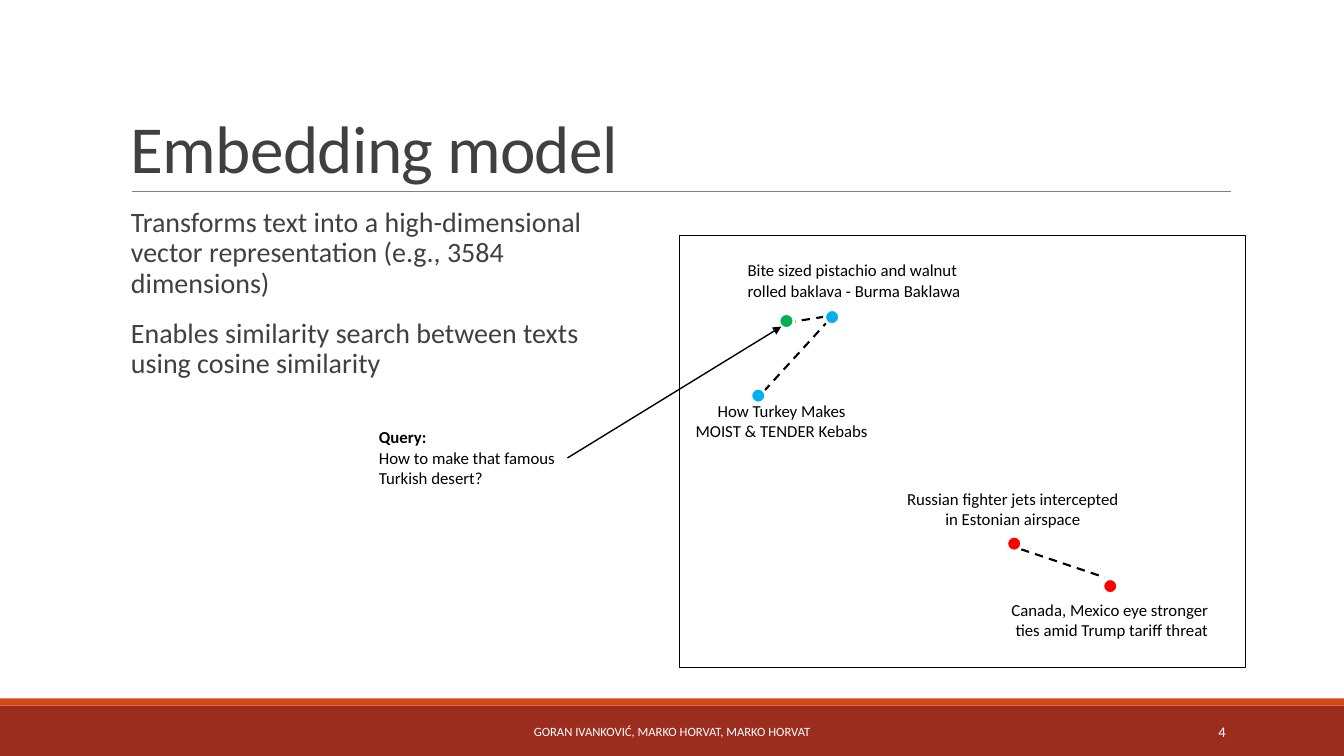
from pptx import Presentation
from pptx.dml.color import RGBColor
from pptx.enum.dml import MSO_LINE
from pptx.enum.shapes import MSO_CONNECTOR, MSO_SHAPE
from pptx.enum.text import MSO_ANCHOR, MSO_AUTO_SIZE, PP_ALIGN
from pptx.oxml.ns import qn
from pptx.util import Cm, Pt
from lxml import etree

BLACK = RGBColor(0x00, 0x00, 0x00)
WHITE = RGBColor(0xFF, 0xFF, 0xFF)
DARK = RGBColor(0x40, 0x40, 0x40)
GRAY = RGBColor(0x80, 0x80, 0x80)
MAROON = RGBColor(0x9B, 0x2D, 0x1F)
ORANGE = RGBColor(0xD3, 0x48, 0x17)
BLUE = RGBColor(0x00, 0xB0, 0xF0)
RED = RGBColor(0xFF, 0x00, 0x00)
GREEN = RGBColor(0x00, 0xB0, 0x50)

prs = Presentation()
prs.slide_width, prs.slide_height = Cm(33.87), Cm(19.05)
s = prs.slides.add_slide(prs.slide_layouts[6])


def add_text(box, text, size, color, align=PP_ALIGN.LEFT, anchor=MSO_ANCHOR.TOP, wrap=True):
    sp = s.shapes.add_textbox(*map(Cm, box))
    tf = sp.text_frame
    tf.text = text
    tf.word_wrap = wrap
    tf.vertical_anchor = anchor
    tf.auto_size = MSO_AUTO_SIZE.NONE if wrap else MSO_AUTO_SIZE.SHAPE_TO_FIT_TEXT
    for p in tf.paragraphs:
        p.alignment = align
        for r in p.runs:
            r.font.name = "Calibri"
            r.font.size = Pt(size)
            r.font.color.rgb = color
    return sp


def add_line(start, end, color, width):
    line = s.shapes.add_connector(MSO_CONNECTOR.STRAIGHT, *map(Cm, start + end))
    line.line.color.rgb = color
    line.line.width = Pt(width)
    etree.SubElement(line._element.spPr, qn("a:effectLst"))
    return line


for top, height, color in [(17.78, 1.27, MAROON), (17.6, 0.18, ORANGE)]:
    sp = s.shapes.add_shape(MSO_SHAPE.RECTANGLE, 0, Cm(top), prs.slide_width, Cm(height))
    sp.shadow.inherit = False
    sp.fill.solid()
    sp.fill.fore_color.rgb = color
    sp.line.fill.background()
add_line((3.33, 4.83), (31.01, 4.83), GRAY, 0.5)

title = add_text((3.05, 0.81, 27.94, 4.04), "Embedding model", 48, DARK, anchor=MSO_ANCHOR.BOTTOM)
p = title.text_frame.paragraphs[0]
p.line_spacing = 0.85
p.runs[0].font._element.set("spc", "-50")

body = add_text(
    (3.05, 5.13, 12.93, 11.18),
    "Transforms text into a high-dimensional vector representation (e.g., 3584 dimensions)\n"
    "Enables similarity search between texts using cosine similarity",
    20, DARK)
body.text_frame.margin_left = Cm(0.25)
body.text_frame.margin_right = 0
for p in body.text_frame.paragraphs:
    p.line_spacing = 0.9
    p.space_before = Pt(12)
    p.space_after = Pt(2)

add_text((10.24, 17.93, 13.39, 1.02), "GORAN IVANKOVIĆ, MARKO HORVAT, MARKO HORVAT", 9, WHITE,
         PP_ALIGN.CENTER, MSO_ANCHOR.MIDDLE)
add_text((27.51, 17.93, 3.63, 1.02), "4", 10.5, WHITE, PP_ALIGN.RIGHT, MSO_ANCHOR.MIDDLE)

frame = s.shapes.add_shape(MSO_SHAPE.RECTANGLE, Cm(17.12), Cm(5.94), Cm(14.27), Cm(10.87))
frame.shadow.inherit = False
frame.fill.background()
frame.line.color.rgb = BLACK
frame.line.width = Pt(0.75)

for start, end in [((19.25, 9.86), (20.83, 8.13)),
                   ((25.73, 13.84), (27.84, 14.55)),
                   ((20.78, 7.98), (20.02, 8.1))]:
    link = add_line(start, end, BLACK, 1.5)
    link.line.dash_style = MSO_LINE.DASH

for left, top, color in [(18.92, 9.78, BLUE), (20.78, 7.8, BLUE), (25.37, 13.51, RED),
                         (27.79, 14.58, RED), (19.63, 7.9, GREEN)]:
    dot = s.shapes.add_shape(MSO_SHAPE.OVAL, Cm(left), Cm(top), Cm(0.38), Cm(0.38))
    dot.shadow.inherit = False
    dot.fill.solid()
    dot.fill.fore_color.rgb = color
    dot.line.color.rgb = WHITE
    dot.line.width = Pt(2)

for left, top, width, align, text in [
    (17.25, 9.98, 4.9, PP_ALIGN.CENTER, "How Turkey Makes\nMOIST & TENDER Kebabs"),
    (18.59, 6.43, 5.94, PP_ALIGN.LEFT,
     "Bite sized pistachio and walnut\nrolled baklava - Burma Baklawa"),
    (25.2, 14.99, 5.64, PP_ALIGN.CENTER,
     "Canada, Mexico eye stronger \nties amid Trump tariff threat"),
    (22.53, 12.19, 5.99, PP_ALIGN.CENTER,
     "Russian fighter jets intercepted\nin Estonian airspace"),
]:
    add_text((left, top, width, 1.27), text, 12, BLACK, align, wrap=False)

query = add_text((9.3, 10.64, 5, 1.8), "Query:\nHow to make that famous\nTurkish desert?",
                 12, BLACK, wrap=False)
query.text_frame.paragraphs[0].runs[0].font.bold = True

arrow = add_line((14.3, 11.54), (19.69, 8.23), BLACK, 1)
arrow.begin_connect(query, 3)
etree.SubElement(arrow.line._get_or_add_ln(), qn("a:tailEnd"), type="triangle")

prs.save("out.pptx")
